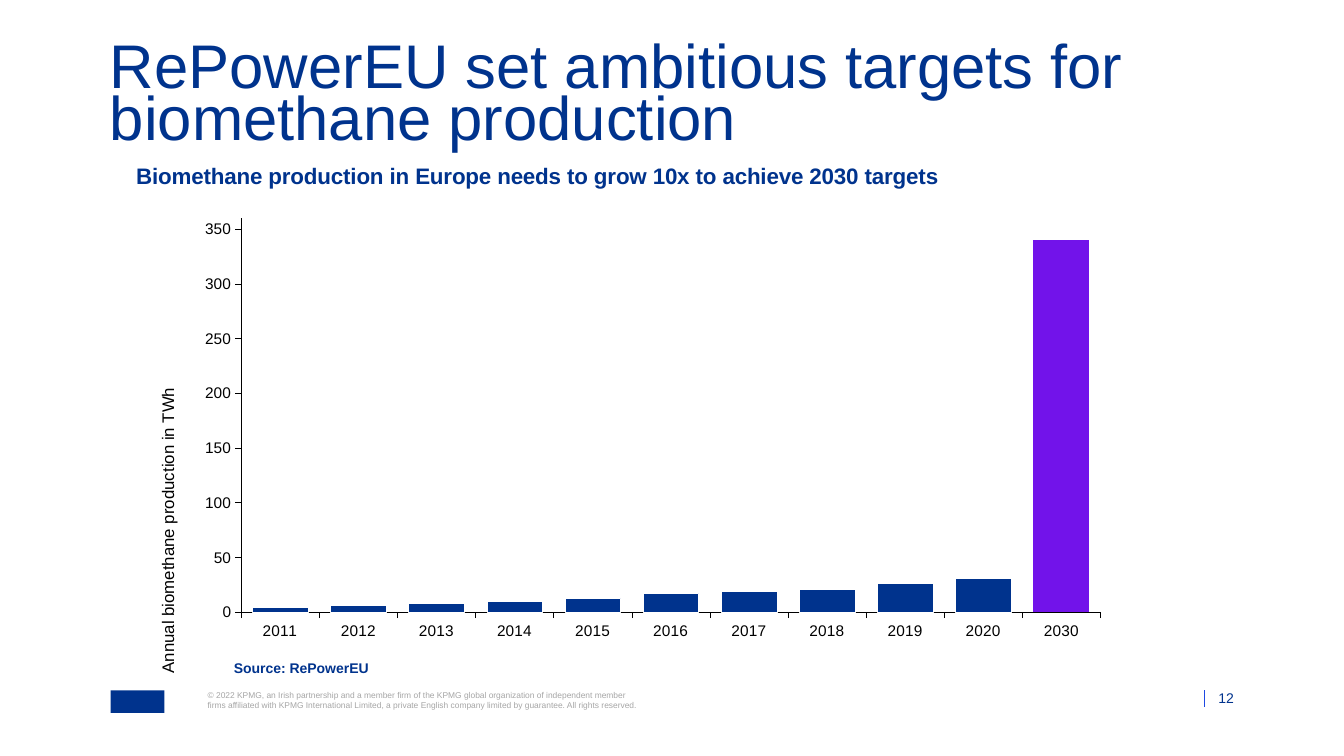
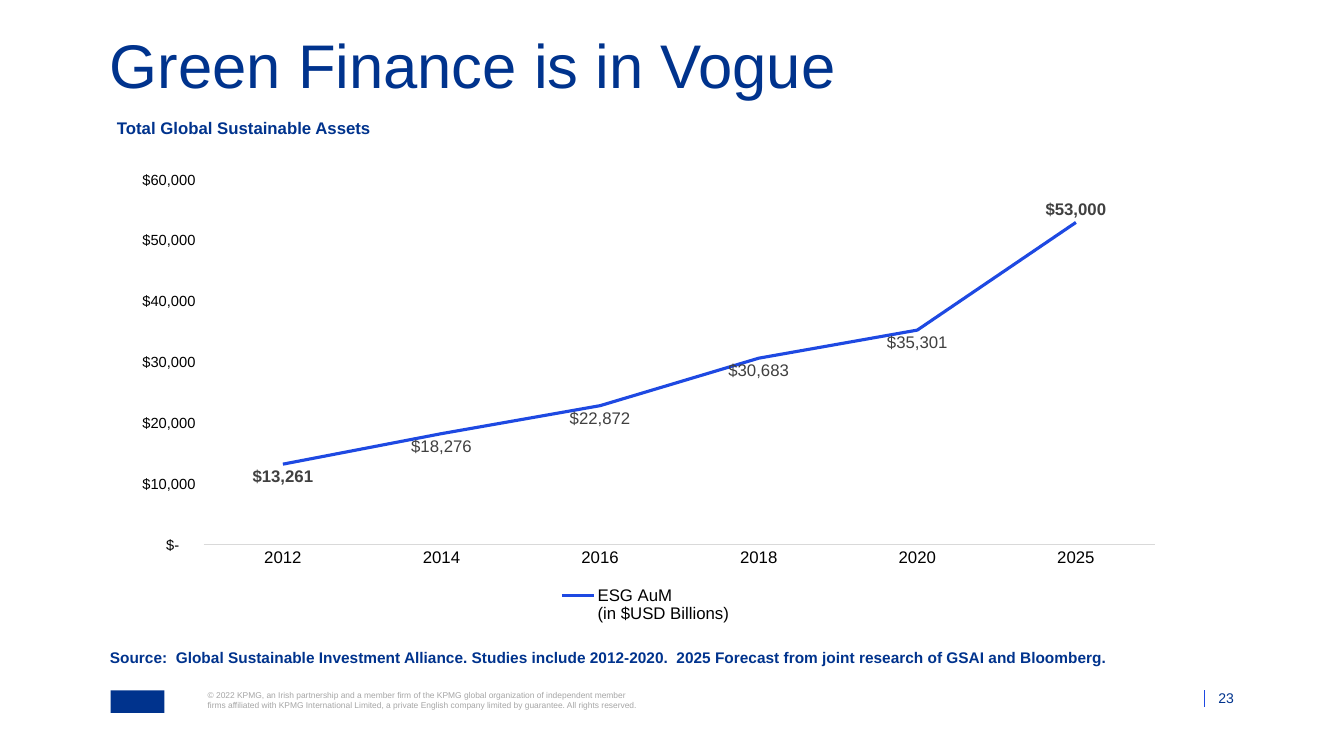
from dataclasses import dataclass

import pptx
import pptx.chart.data
import pptx.dml.color
import pptx.enum.chart
import pptx.enum.shapes
import pptx.enum.text
import pptx.oxml
import pptx.oxml.ns
import pptx.util

Pt = pptx.util.Pt
qn = pptx.oxml.ns.qn
chart_enum = pptx.enum.chart
PP_ALIGN = pptx.enum.text.PP_ALIGN
MSO_ANCHOR = pptx.enum.text.MSO_ANCHOR


@dataclass(frozen=True)
class Theme:
    font: str = "Arial"
    navy: str = "00338D"
    blue: str = "1E49E2"
    purple: str = "7213EA"
    black: str = "000000"
    white: str = "FFFFFF"
    label_gray: str = "404040"
    axis_gray: str = "D9D9D9"
    footer_gray: str = "A6A6A6"
    title_size: float = 44
    chart_title_size: float = 16
    heading_size: float = 12
    axis_size: float = 11
    small_axis_size: float = 10.5
    source_size: float = 10
    footer_size: float = 6


@dataclass(frozen=True)
class Box:
    left: float
    top: float
    width: float
    height: float

    def inner(self, left, top, width, height):
        return Box(self.left + left, self.top + top, width, height)

    def lengths(self):
        return [Pt(value) for value in (self.left, self.top, self.width, self.height)]


THEME = Theme()
PAGE = Box(0, 0, 960, 540)
TITLE = Box(78.5, 33.8, 803, 42)
FOOTER = Box(79, 493.2, 803, 16)
DOLLARS = '_("$"* #,##0_);_("$"* \\(#,##0\\);_("$"* "-"??_);_(@_)'
COPYRIGHT = (
    "© 2022 KPMG, an Irish partnership and a member firm of the KPMG global "
    "organization of independent member firms affiliated with KPMG International "
    "Limited, a private English company limited by guarantee. All rights reserved."
)


# Shared helpers
def rgb(color):
    return pptx.dml.color.RGBColor.from_string(color)


def style_font(font, size, color=THEME.black, bold=False):
    font.name = THEME.font
    font.size = Pt(size)
    font.bold = bold
    font.color.rgb = rgb(color)


def add_text(slide, box, text, size, color=THEME.navy, bold=False,
             align=PP_ALIGN.LEFT, anchor=MSO_ANCHOR.TOP, line_spacing=None):
    frame = slide.shapes.add_textbox(*box.lengths()).text_frame
    frame.word_wrap = True
    frame.vertical_anchor = anchor
    frame.margin_left = frame.margin_right = 0
    frame.margin_top = frame.margin_bottom = 0
    paragraph = frame.paragraphs[0]
    paragraph.alignment = align
    if line_spacing:
        paragraph.line_spacing = line_spacing
    run = paragraph.add_run()
    run.text = text
    style_font(run.font, size, color, bold)


def set_layout(parent, position, inner_plot=False):
    """Place a chart part by fractions of the chart's size."""
    for old_layout in parent.findall(qn("c:layout")):
        parent.remove(old_layout)
    names = ("x", "y", "w", "h")[:len(position)]
    target = '<c:layoutTarget val="inner"/>' if inner_plot else ""
    modes = "".join(f'<c:{name}Mode val="edge"/>' for name in names[:2])
    values = "".join(f'<c:{name} val="{value}"/>' for name, value in zip(names, position))
    layout = pptx.oxml.parse_xml(
        f'<c:layout {pptx.oxml.ns.nsdecls("c")}><c:manualLayout>'
        f"{target}{modes}{values}</c:manualLayout></c:layout>")
    text = parent.find(qn("c:tx"))
    parent.insert(0 if text is None else parent.index(text) + 1, layout)


def add_chart_heading(heading, text, size, color, bold, position):
    run = heading.text_frame.paragraphs[0].add_run()
    run.text = text
    style_font(run.font, size, color, bold)
    set_layout(heading._element, position)


def style_axis(axis, size, tick, line_color=None, line_width=0.25):
    axis.has_major_gridlines = False
    axis.major_tick_mark = tick
    axis.minor_tick_mark = chart_enum.XL_TICK_MARK.NONE
    style_font(axis.tick_labels.font, size)
    if line_color:
        axis.format.line.color.rgb = rgb(line_color)
        axis.format.line.width = Pt(line_width)
    else:
        axis.format.line.fill.background()


def add_chart(slide, box, kind, categories, name, values, plot_position,
              number_format="General"):
    data = pptx.chart.data.CategoryChartData(number_format=number_format)
    data.categories = categories
    data.add_series(name, values)
    chart = slide.shapes.add_chart(kind, *box.lengths(), data).chart
    chart.has_title = chart.has_legend = False
    style_font(chart.font, THEME.source_size)
    chart.plots[0].vary_by_categories = False
    set_layout(chart._chartSpace.find(f".//{qn('c:plotArea')}"), plot_position, True)
    return chart


# Parts on every slide
def add_footer(slide, box, number):
    mark = slide.shapes.add_shape(pptx.enum.shapes.MSO_SHAPE.RECTANGLE,
                                  *box.inner(0, 0, 38.5, 16).lengths())
    mark.shadow.inherit = False
    mark.fill.solid()
    mark.fill.fore_color.rgb = rgb(THEME.navy)
    mark.line.fill.background()

    add_text(slide, box.inner(69.3, 0, 312.5, 14.5), COPYRIGHT,
             THEME.footer_size, THEME.footer_gray)

    x = box.left + 781.4
    divider = slide.shapes.add_connector(
        pptx.enum.shapes.MSO_CONNECTOR.STRAIGHT,
        Pt(x), Pt(box.top), Pt(x), Pt(box.top + 12))
    divider.line.color.rgb = rgb(THEME.blue)
    divider.line.width = Pt(0.5)
    divider._element.spPr.append(pptx.oxml.parse_xml(
        f'<a:effectLst {pptx.oxml.ns.nsdecls("a")}/>'))

    add_text(slide, box.inner(782.8, 0, 19.5, 11.5), str(number), THEME.source_size,
             align=PP_ALIGN.RIGHT, anchor=MSO_ANCHOR.BOTTOM)


def add_slide(presentation, title, number):
    slide = presentation.slides.add_slide(presentation.slide_layouts[6])
    add_footer(slide, FOOTER, number)
    add_text(slide, TITLE, title, THEME.title_size, line_spacing=0.7)
    return slide


# Column chart of biomethane production
def add_biomethane_chart(slide, box):
    years = [str(year) for year in range(2011, 2021)] + ["2030"]
    production = (4, 6, 8, 10, 13, 17, 19, 21, 26, 31, 340)
    chart = add_chart(slide, box, chart_enum.XL_CHART_TYPE.COLUMN_CLUSTERED, years,
                      "Series 1", production, (0.118, 0.152, 0.772, 0.729))
    chart.plots[0].gap_width = 40
    add_chart_heading(
        chart.chart_title,
        "Biomethane production in Europe needs to grow 10x to achieve 2030 targets",
        THEME.chart_title_size, THEME.navy, True, (0.02, 0.04))

    outside = chart_enum.XL_TICK_MARK.OUTSIDE
    for axis in (chart.category_axis, chart.value_axis):
        style_axis(axis, THEME.axis_size, outside, THEME.black)
    chart.category_axis.tick_label_position = chart_enum.XL_TICK_LABEL_POSITION.LOW
    value_axis = chart.value_axis
    value_axis.minimum_scale, value_axis.maximum_scale = 0, 360
    value_axis.major_unit = 50
    add_chart_heading(value_axis.axis_title, "Annual biomethane production in TWh",
                      THEME.heading_size, THEME.black, False, (0.04, 0.46))
    body = value_axis.axis_title._element.find(f".//{qn('a:bodyPr')}")
    body.set("rot", "-5400000")
    body.set("vert", "horz")

    series = chart.plots[0].series[0]
    series.format.fill.solid()
    series.format.fill.fore_color.rgb = rgb(THEME.navy)
    series.format.line.color.rgb = rgb(THEME.white)
    series.format.line.width = Pt(0.25)
    target = series.points[len(years) - 1].format
    target.fill.solid()
    target.fill.fore_color.rgb = rgb(THEME.purple)
    target.line.fill.background()


# Line chart of sustainable assets
def add_assets_chart(slide, box):
    years = ("2012", "2014", "2016", "2018", "2020", "2025")
    assets = (13261, 18276, 22872, 30683, 35301, 53000)
    chart = add_chart(slide, box, chart_enum.XL_CHART_TYPE.LINE, years,
                      "ESG AuM \n(in $USD Billions)", assets,
                      (0.082, 0.04, 0.9, 0.784), DOLLARS)
    chart.has_legend = True
    chart.legend.position = chart_enum.XL_LEGEND_POSITION.BOTTOM
    chart.legend.include_in_layout = False
    style_font(chart.legend.font, THEME.heading_size)

    no_tick = chart_enum.XL_TICK_MARK.NONE
    style_axis(chart.category_axis, THEME.heading_size, no_tick, THEME.axis_gray, 0.75)
    style_axis(chart.value_axis, THEME.small_axis_size, no_tick)
    value_axis = chart.value_axis
    value_axis.minimum_scale, value_axis.maximum_scale = 0, 60000
    value_axis.major_unit = 10000
    value_axis.tick_labels.number_format = DOLLARS
    value_axis.tick_labels.number_format_is_linked = False

    series = chart.plots[0].series[0]
    series.smooth = False
    series.marker.style = chart_enum.XL_MARKER_STYLE.NONE
    series.format.line.color.rgb = rgb(THEME.blue)
    series.format.line.width = Pt(2.25)

    below = chart_enum.XL_LABEL_POSITION.BELOW
    labels = series.data_labels
    labels.show_value = True
    labels.number_format = DOLLARS
    labels.number_format_is_linked = False
    labels.position = below
    style_font(labels.font, THEME.heading_size, THEME.label_gray)
    bold_labels = {0: below, len(years) - 1: chart_enum.XL_LABEL_POSITION.ABOVE}
    for index, position in bold_labels.items():
        label = series.points[index].data_label
        style_font(label.font, THEME.heading_size, THEME.label_gray, True)
        label.position = position


# Slides
def add_biomethane_slide(presentation):
    slide = add_slide(
        presentation, "RePowerEU set ambitious targets for biomethane production", 12)
    add_biomethane_chart(slide, Box(78.5, 97.2, 795, 386))
    add_text(slide, Box(167, 471, 502, 24.5), "Source: RePowerEU",
             THEME.source_size, bold=True)


def add_finance_slide(presentation):
    slide = add_slide(presentation, "Green Finance is in Vogue", 23)
    add_assets_chart(slide, Box(83.5, 115.2, 755.3, 332.6))
    add_text(slide, Box(83.5, 84.2, 823, 14.5), "Total Global Sustainable Assets",
             THEME.heading_size, bold=True)
    add_text(slide, Box(78.5, 463, 803.5, 25),
             "Source:  Global Sustainable Investment Alliance. Studies include 2012-2020.  "
             "2025 Forecast from joint research of GSAI and Bloomberg.",
             THEME.axis_size, bold=True)


def main():
    presentation = pptx.Presentation()
    presentation.slide_width = Pt(PAGE.width)
    presentation.slide_height = Pt(PAGE.height)
    add_biomethane_slide(presentation)
    add_finance_slide(presentation)
    presentation.save("out.pptx")


if __name__ == "__main__":
    main()
